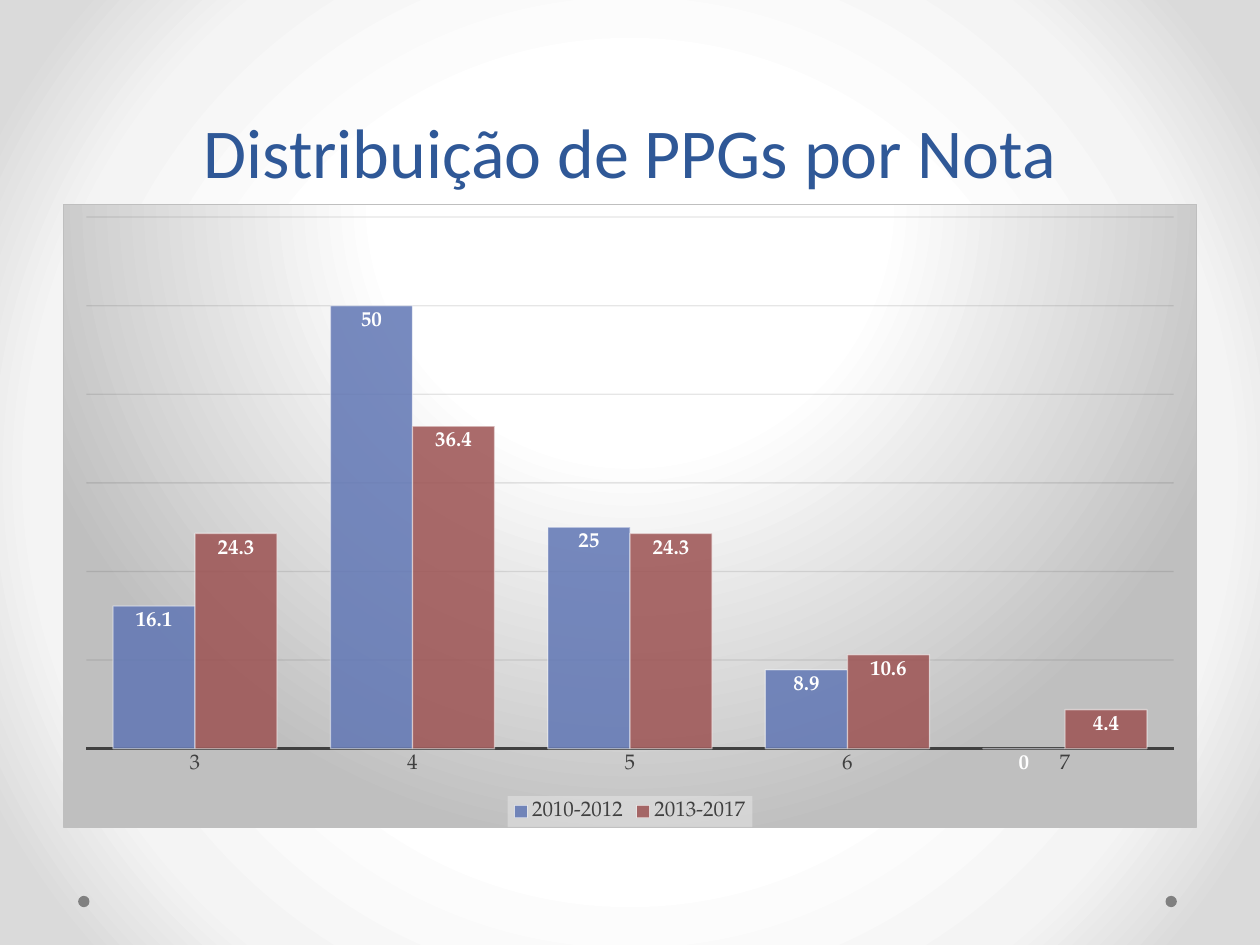
from dataclasses import dataclass

from pptx import Presentation
from pptx.chart.data import CategoryChartData
from pptx.dml.color import RGBColor
from pptx.enum.chart import (XL_CHART_TYPE, XL_LABEL_POSITION,
                             XL_LEGEND_POSITION, XL_TICK_LABEL_POSITION,
                             XL_TICK_MARK)
from pptx.enum.shapes import MSO_SHAPE
from pptx.enum.text import MSO_ANCHOR, PP_ALIGN
from pptx.oxml import parse_xml
from pptx.oxml.ns import nsdecls, qn
from pptx.util import Inches, Pt


@dataclass(frozen=True)
class Theme:
    title_font: str = "Calibri"
    chart_font: str = "TeX Gyre Pagella"
    title_size: int = 40
    title_leading: int = 58
    chart_size: int = 12
    thin_line: float = 0.75
    axis_line: float = 1.5
    title: str = "2F5897"
    dot: str = "808080"
    text: str = "404040"
    grid: str = "0D0D0D"
    border: str = "BFBFBF"
    legend_fill: str = "F2F2F2"
    white: str = "FFFFFF"


@dataclass(frozen=True)
class Period:
    name: str
    shares: tuple[float, ...]
    color: str


@dataclass(frozen=True)
class Gradient:
    stops: tuple[tuple[int, str], ...]
    focus: tuple[int, int, int, int]  # left, top, right, bottom in percent


THEME = Theme()
GRADES = ("3", "4", "5", "6", "7")
PERIODS = (
    Period("2010-2012", (16.1, 50, 25, 8.9, 0), "6076B4"),
    Period("2013-2017", (24.3, 36.4, 24.3, 10.6, 4.4), "9C5252"),
)
BACKGROUND = Gradient(((50, "FFFFFF"), (76, "F4F4F4"), (92, "DADADA")),
                      (50, 50, 50, 50))
CHART_AREA = Gradient(((0, "FFFFFF"), (39, "FFFFFF"), (100, "BFBFBF")),
                      (50, -80, 50, 180))
DOT_LEFTS = (9.25, 0.62)


def rgb(value: str) -> RGBColor:
    return RGBColor.from_string(value)


def gradient_xml(gradient: Gradient) -> str:
    stops = "".join(
        f'<a:gs pos="{position * 1000}"><a:srgbClr val="{color}"/></a:gs>'
        for position, color in gradient.stops)
    left, top, right, bottom = (side * 1000 for side in gradient.focus)
    return (f'<a:gradFill {nsdecls("a")} rotWithShape="1"><a:gsLst>{stops}</a:gsLst>'
            f'<a:path path="circle"><a:fillToRect l="{left}" t="{top}" '
            f'r="{right}" b="{bottom}"/></a:path></a:gradFill>')


def set_opacity(owner, percent: int) -> None:
    color = owner.find(f'{qn("a:solidFill")}/{qn("a:srgbClr")}')
    color.append(parse_xml(f'<a:alpha {nsdecls("a")} val="{percent * 1000}"/>'))


def style_font(font, size: int, color: str, name: str, bold: bool = False) -> None:
    font.size, font.name, font.bold = Pt(size), name, bold
    font.color.rgb = rgb(color)


def style_line(line, color: str, width: float) -> None:
    line.color.rgb = rgb(color)
    line.width = Pt(width)


def paint_background(slide) -> None:
    slide.background.fill.solid()
    properties = next(slide.element.iter(qn("p:bgPr")))
    properties.replace(properties.find(qn("a:solidFill")),
                       parse_xml(gradient_xml(BACKGROUND)))


def add_dot(slide, left: float) -> None:
    dot = slide.shapes.add_shape(MSO_SHAPE.OVAL, Inches(left), Inches(7.11),
                                 Inches(0.09), Inches(0.09))
    dot.shadow.inherit = False
    dot.fill.solid()
    dot.fill.fore_color.rgb = rgb(THEME.dot)
    dot.line.fill.background()


def add_title(slide, text: str) -> None:
    frame = slide.shapes.add_textbox(Inches(0.5), Inches(0), Inches(9),
                                     Inches(1.58)).text_frame
    frame.word_wrap = True
    frame.vertical_anchor = MSO_ANCHOR.BOTTOM
    frame.text = text
    heading = frame.paragraphs[0]
    heading.alignment = PP_ALIGN.CENTER
    heading.line_spacing = Pt(THEME.title_leading)
    style_font(heading.runs[0].font, THEME.title_size, THEME.title, THEME.title_font)


def style_axes(chart) -> None:
    grades = chart.category_axis
    grades.major_tick_mark = grades.minor_tick_mark = XL_TICK_MARK.NONE
    grades.tick_label_position = XL_TICK_LABEL_POSITION.NEXT_TO_AXIS
    style_font(grades.tick_labels.font, THEME.chart_size, THEME.text, THEME.chart_font)
    style_line(grades.format.line, THEME.text, THEME.axis_line)

    shares = chart.value_axis
    shares.visible = False
    shares.minimum_scale, shares.maximum_scale, shares.major_unit = 0, 60, 10
    style_line(shares.major_gridlines.format.line, THEME.grid, THEME.thin_line)
    grid = next(chart.element.iter(qn("c:majorGridlines")))
    set_opacity(next(grid.iter(qn("a:ln"))), 10)


def style_periods(chart) -> None:
    plot = chart.plots[0]
    plot.gap_width, plot.overlap, plot.vary_by_categories = 65, 0, False
    for period, series in zip(PERIODS, plot.series):
        series.format.fill.solid()
        series.format.fill.fore_color.rgb = rgb(period.color)
        style_line(series.format.line, THEME.white, THEME.thin_line)
        labels = series.data_labels
        labels.show_value = True
        labels.position = XL_LABEL_POSITION.INSIDE_END
        style_font(labels.font, THEME.chart_size, THEME.white, THEME.chart_font, True)
    for bars in chart.element.iter(qn("c:ser")):
        look = bars.find(qn("c:spPr"))
        set_opacity(look, 85)
        set_opacity(look.find(qn("a:ln")), 50)


def style_legend(chart) -> None:
    chart.has_legend = True
    chart.legend.position = XL_LEGEND_POSITION.BOTTOM
    chart.legend.include_in_layout = False
    style_font(chart.legend.font, THEME.chart_size, THEME.text, THEME.chart_font)
    look = parse_xml(f'<c:spPr {nsdecls("c", "a")}><a:solidFill>'
                     f'<a:srgbClr val="{THEME.legend_fill}"/></a:solidFill></c:spPr>')
    set_opacity(look, 39)
    next(chart.element.iter(qn("c:legend"))).find(qn("c:txPr")).addprevious(look)


def paint_chart_area(chart) -> None:
    look = parse_xml(
        f'<c:spPr {nsdecls("c", "a")}>{gradient_xml(CHART_AREA)}'
        f'<a:ln w="{Pt(THEME.thin_line)}"><a:solidFill>'
        f'<a:srgbClr val="{THEME.border}"/></a:solidFill></a:ln></c:spPr>')
    chart.element.find(qn("c:txPr")).addprevious(look)


def add_grade_chart(slide) -> None:
    data = CategoryChartData()
    data.categories = GRADES
    for period in PERIODS:
        data.add_series(period.name, period.shares)
    chart = slide.shapes.add_chart(XL_CHART_TYPE.COLUMN_CLUSTERED, Inches(0.5),
                                   Inches(1.62), Inches(9), Inches(4.95), data).chart
    chart.has_title = False
    style_font(chart.font, THEME.chart_size, THEME.text, THEME.chart_font)
    style_axes(chart)
    style_periods(chart)
    style_legend(chart)
    paint_chart_area(chart)


def main() -> None:
    deck = Presentation()
    deck.slide_width, deck.slide_height = Inches(10), Inches(7.5)
    slide = deck.slides.add_slide(deck.slide_layouts[6])

    # Backdrop and footer dots
    paint_background(slide)
    for left in DOT_LEFTS:
        add_dot(slide, left)

    # Title, clear of the chart below it
    add_title(slide, "Distribuição de PPGs por Nota")
    add_grade_chart(slide)
    deck.save("out.pptx")


if __name__ == "__main__":
    main()
